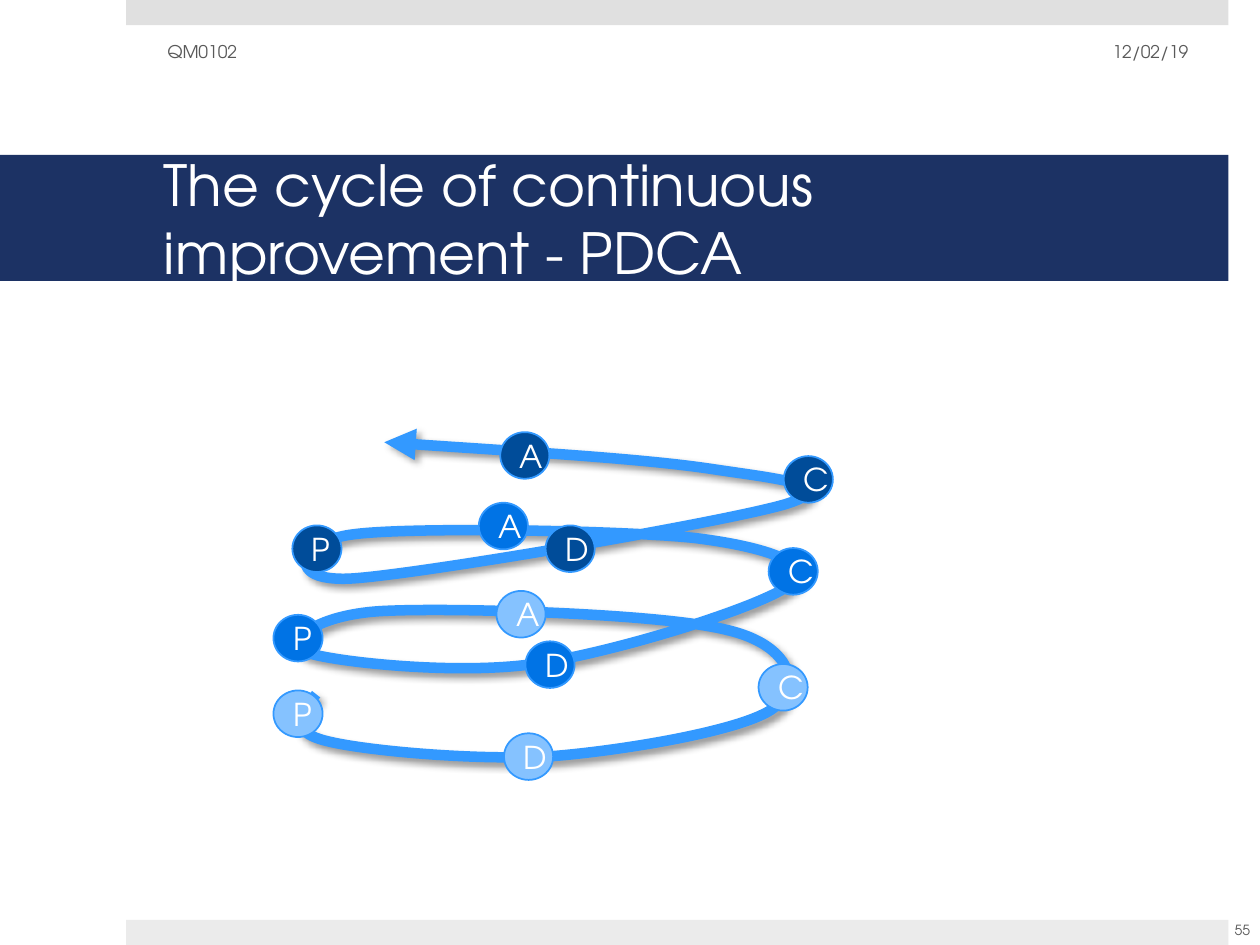
from lxml import etree
from pptx import Presentation
from pptx.dml.color import RGBColor
from pptx.enum.shapes import MSO_SHAPE as SHAPE
from pptx.enum.text import MSO_ANCHOR as ANCHOR, MSO_AUTO_SIZE as FIT, PP_ALIGN as ALIGN
from pptx.oxml import parse_xml
from pptx.oxml.ns import nsdecls, qn
from pptx.util import Pt

FONT = "TeX Gyre Adventor"
WHITE = RGBColor(0xFF, 0xFF, 0xFF)
NAVY = RGBColor(0x1C, 0x32, 0x64)
GREY = RGBColor(0x59, 0x59, 0x59)
TOP_BAR = RGBColor(0xE0, 0xE0, 0xE0)
BOTTOM_BAR = RGBColor(0xEB, 0xEB, 0xEB)
SPIRAL = RGBColor(0x33, 0x99, 0xFF)
LIGHT = RGBColor(0x85, 0xC2, 0xFF)
MEDIUM = RGBColor(0x00, 0x73, 0xE5)
DARK = RGBColor(0x00, 0x4C, 0x99)


def write(sp, text, size, color=WHITE, align=ALIGN.LEFT):
    tf = sp.text_frame
    tf.word_wrap = True
    tf.auto_size = FIT.NONE
    tf.vertical_anchor = ANCHOR.MIDDLE
    p = tf.paragraphs[0]
    p.alignment = align
    r = p.add_run()
    r.text = text
    r.font.name, r.font.size, r.font.color.rgb = FONT, Pt(size), color


def add_filled(kind, left, top, width, height, fill):
    sp = s.shapes.add_shape(kind, Pt(left), Pt(top), Pt(width), Pt(height))
    sp.shadow.inherit = False
    sp.fill.solid()
    sp.fill.fore_color.rgb = fill
    sp.line.fill.background()
    return sp


prs = Presentation()
prs.slide_width, prs.slide_height = Pt(720), Pt(540)
s = prs.slides.add_slide(prs.slide_layouts[5])

# Page bars and title band
add_filled(SHAPE.RECTANGLE, 72, 0, 630, 14.4, TOP_BAR)
add_filled(SHAPE.RECTANGLE, 72, 525.6, 630, 14.4, BOTTOM_BAR)
title = s.shapes.title
title.left, title.top, title.width, title.height = Pt(0), Pt(88.56), Pt(702), Pt(72)
title.fill.solid()
title.fill.fore_color.rgb = NAVY
write(title, "The cycle of continuous improvement - PDCA", 32.4)
tf = title.text_frame
tf.margin_left, tf.margin_right = Pt(93.6), Pt(21.6)
tf.margin_top = tf.margin_bottom = Pt(3.6)

# Date, course code and page number
for text, left, top, width, size, align in [
    ("12/02/19", 518.4, 15.12, 167.76, 10, ALIGN.RIGHT),
    ("QM0102", 88.56, 15.12, 228.24, 10, ALIGN.LEFT),
    ("55", 691.92, 516.96, 36, 8, ALIGN.CENTER),
]:
    box = s.shapes.add_textbox(Pt(left), Pt(top), Pt(width), Pt(28.8))
    write(box, text, size, GREY, align)

# Spiral: a start point, then two control points and an end point per curve
START = (180.7, 396.7)
CURVES = [
    [(172.1, 407.5), (163.4, 417.6), (186.5, 423.4)],
    [(208.8, 429.1), (274.3, 434.9), (316.8, 432)],
    [(360, 428.4), (426.2, 416.9), (442.1, 404.6)],
    [(458.6, 393.1), (452.9, 368.6), (415.4, 360)],
    [(378.7, 350.6), (258.5, 347), (218.2, 349.2)],
    [(178.6, 351.4), (161.3, 367.9), (175.7, 373)],
    [(190.1, 378), (259.2, 385.9), (305.3, 379.4)],
    [(351.4, 373), (436.3, 346.3), (451.4, 334.1)],
    [(467.3, 322.6), (438.5, 312.5), (396.7, 307.4)],
    [(355.7, 303.1), (234.7, 301), (202.3, 305.3)],
    [(169.9, 308.9), (161.3, 333.4), (202.3, 330.5)],
    [(243.4, 327.6), (415.4, 298.1), (449.3, 288)],
    [(483.1, 277.2), (443.5, 273.6), (405.4, 267.8)],
    [(366.5, 262.1), (293, 257.8), (219.6, 252.7)],
]
LEFT, TOP, RIGHT, BOTTOM = 170.64, 252.72, 461.52, 432
frame = s.shapes.build_freeform(Pt(LEFT), Pt(TOP))
frame.add_line_segments([(Pt(RIGHT), Pt(BOTTOM))], close=False)
spiral = frame.convert_to_shape()
spiral.shadow.inherit = False
spiral.fill.background()
spiral.line.color.rgb, spiral.line.width = SPIRAL, Pt(6)

outline = next(spiral._element.iter(qn("a:path")))
for child in list(outline):
    outline.remove(child)
for tag, points in [("a:moveTo", [START])] + [("a:cubicBezTo", c) for c in CURVES]:
    step = etree.SubElement(outline, qn(tag))
    for x, y in points:
        etree.SubElement(step, qn("a:pt"), x=str(Pt(x - LEFT)), y=str(Pt(y - TOP)))
etree.SubElement(spiral.line._get_or_add_ln(), qn("a:tailEnd"), type="triangle")
spiral._element.spPr.find(qn("a:effectLst")).append(parse_xml(
    f'<a:outerShdw {nsdecls("a")} blurRad="{Pt(4)}" dist="{Pt(3)}" dir="2700000" rotWithShape="0">'
    '<a:srgbClr val="000000"><a:alpha val="40000"/></a:srgbClr></a:outerShdw>'))

# Plan, do, check and act steps, darker with every turn
for letter, left, top, fill in [
    ("P", 156.24, 394.56, LIGHT),
    ("D", 288, 419.04, LIGHT),
    ("C", 433.44, 379.44, LIGHT),
    ("A", 283.68, 337.68, LIGHT),
    ("A", 273.6, 287.28, MEDIUM),
    ("P", 156.24, 351.36, MEDIUM),
    ("P", 167.04, 300.24, DARK),
    ("D", 300.24, 366.48, MEDIUM),
    ("C", 439.2, 313.2, MEDIUM),
    ("C", 447.84, 260.64, DARK),
    ("D", 311.76, 300.24, DARK),
    ("A", 285.84, 246.96, DARK),
]:
    step = add_filled(SHAPE.OVAL, left, top, 28.08, 26.64, fill)
    step.line.color.rgb, step.line.width = SPIRAL, Pt(1)
    write(step, letter, 18, align=ALIGN.CENTER)

prs.save("out.pptx")
